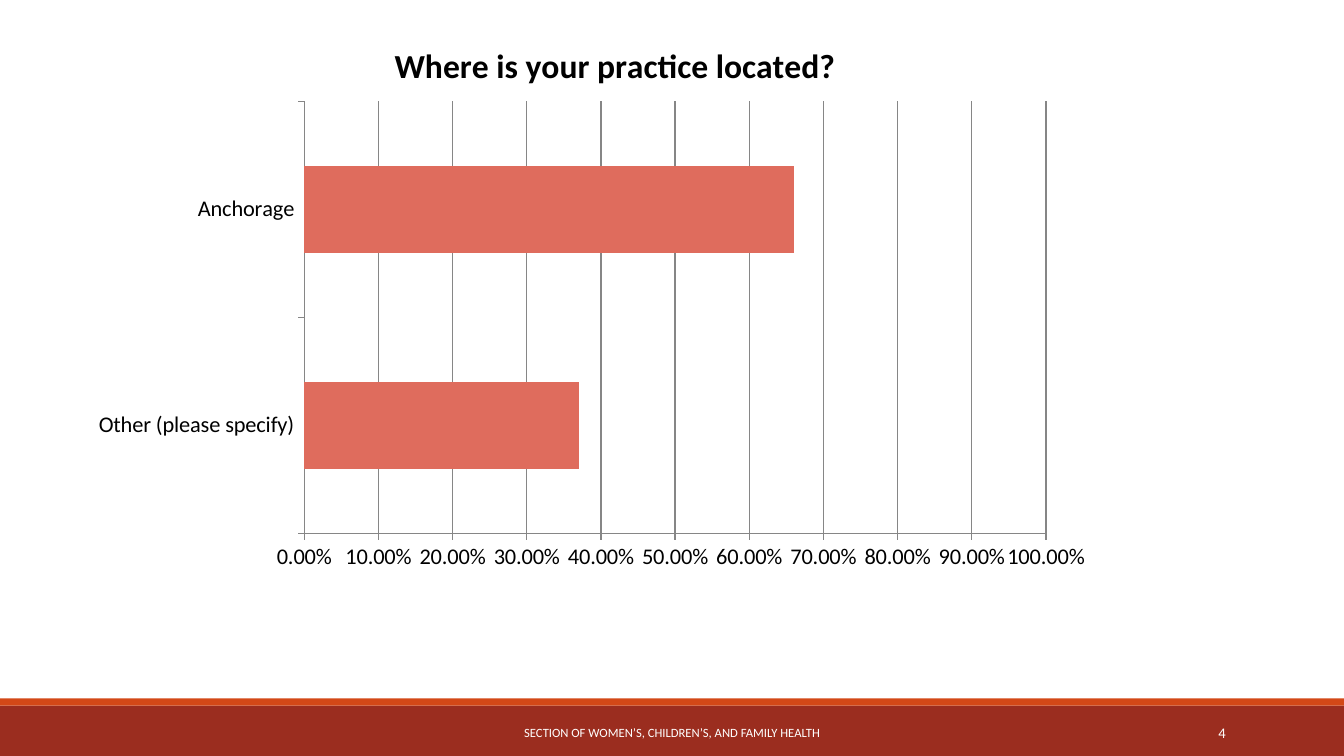
from dataclasses import dataclass

import pptx
import pptx.chart.data
import pptx.dml.color
import pptx.enum.chart
import pptx.enum.shapes
import pptx.enum.text
import pptx.oxml
import pptx.oxml.ns
import pptx.util

Cm = pptx.util.Cm
Pt = pptx.util.Pt
RGB = pptx.dml.color.RGBColor
Align = pptx.enum.text.PP_ALIGN

WHITE = RGB(0xFF, 0xFF, 0xFF)
BLACK = RGB(0x00, 0x00, 0x00)
GRAY = RGB(0x86, 0x86, 0x86)
BRICK = RGB(0x9B, 0x2D, 0x1F)
ORANGE = RGB(0xD3, 0x48, 0x17)
CORAL = RGB(0xDF, 0x6C, 0x5D)
FONT = "Calibri"
WIDE, HIGH = 33.87, 19.05


@dataclass
class Band:
    top: float
    height: float
    color: RGB


@dataclass
class Label:
    text: str
    left: float
    width: float
    size: float
    align: Align


BANDS = [Band(17.78, 1.27, BRICK), Band(17.6, 0.18, ORANGE)]
LABELS = [
    Label("SECTION OF WOMEN’S, CHILDREN’S, AND FAMILY HEALTH",
          10.24, 13.39, 9, Align.CENTER),
    Label("4", 27.51, 3.63, 10.5, Align.RIGHT),
]
PLACES = {"Other (please specify)": 0.37, "Anchorage": 0.66}


def style(font, size: float, color: RGB = BLACK, bold: bool = False) -> None:
    font.name, font.size, font.bold = FONT, Pt(size), bold
    font.color.rgb = color


def rule(line) -> None:
    line.color.rgb = GRAY
    line.width = Pt(1)


def write(frame, text: str, *, size: float, color: RGB = BLACK,
          bold: bool = False, align: Align = Align.CENTER) -> None:
    para = frame.paragraphs[0]
    para.alignment = align
    run = para.add_run()
    run.text = text
    style(run.font, size, color, bold)


def draw_band(slide, band: Band) -> None:
    shape = slide.shapes.add_shape(
        pptx.enum.shapes.MSO_SHAPE.RECTANGLE,
        0, Cm(band.top), Cm(WIDE), Cm(band.height))
    shape.shadow.inherit = False
    shape.fill.solid()
    shape.fill.fore_color.rgb = band.color
    shape.line.fill.background()


def draw_label(slide, label: Label) -> None:
    box = slide.shapes.add_textbox(
        Cm(label.left), Cm(17.95), Cm(label.width), Cm(1.02))
    frame = box.text_frame
    frame.word_wrap = True
    frame.vertical_anchor = pptx.enum.text.MSO_ANCHOR.MIDDLE
    write(frame, label.text, size=label.size, color=WHITE, align=label.align)


def place(part, index: int, **sides: float) -> None:
    """Give a chart part a manual layout, in percent of the chart."""
    for old in part.findall(pptx.oxml.ns.qn("c:layout")):
        part.remove(old)
    inner = '<c:layoutTarget val="inner"/>' if "w" in sides else ""
    modes = "".join(f'<c:{key}Mode val="edge"/>' for key in "xy")
    sizes = "".join(f'<c:{key} val="{val / 100:.4f}"/>'
                    for key, val in sides.items())
    part.insert(index, pptx.oxml.parse_xml(
        f'<c:layout {pptx.oxml.ns.nsdecls("c")}><c:manualLayout>'
        f'{inner}{modes}{sizes}</c:manualLayout></c:layout>'))


def draw_chart(slide) -> None:
    data = pptx.chart.data.CategoryChartData(number_format="0.00%")
    data.categories = list(PLACES)
    data.add_series("Series 1", list(PLACES.values()))
    chart = slide.shapes.add_chart(
        pptx.enum.chart.XL_CHART_TYPE.BAR_CLUSTERED,
        Cm(2.08), Cm(0.94), Cm(27.94), Cm(14.07), data).chart
    style(chart.font, 10)
    chart.has_legend = False

    # Title
    chart.has_title = True
    title = chart.chart_title
    write(title.text_frame, "Where is your practice located?",
          size=24, bold=True)
    title.include_in_layout = False
    place(title._element, 1, x=27.6, y=-0.2)

    # Bars
    plot = chart.plots[0]
    plot.gap_width = 150
    plot.vary_by_categories = False
    fill = plot.series[0].format.fill
    fill.solid()
    fill.fore_color.rgb = CORAL
    area = chart._chartSpace.chart.plotArea
    place(area, 0, x=20, y=11.5, w=66.9, h=77.4)

    # Axes
    for axis in (chart.category_axis, chart.value_axis):
        style(axis.tick_labels.font, 16)
        axis.major_tick_mark = pptx.enum.chart.XL_TICK_MARK.OUTSIDE
        rule(axis.format.line)
    axis = chart.value_axis
    axis.minimum_scale, axis.maximum_scale, axis.major_unit = 0, 1, 0.1
    axis.tick_labels.number_format = "0.00%"
    axis.tick_labels.number_format_is_linked = False
    axis.has_major_gridlines = True
    rule(axis.major_gridlines.format.line)


def main() -> None:
    deck = pptx.Presentation()
    deck.slide_width, deck.slide_height = Cm(WIDE), Cm(HIGH)
    slide = deck.slides.add_slide(deck.slide_layouts[6])

    # Footer
    for band in BANDS:
        draw_band(slide, band)
    for label in LABELS:
        draw_label(slide, label)

    draw_chart(slide)
    deck.save("out.pptx")


if __name__ == "__main__":
    main()
